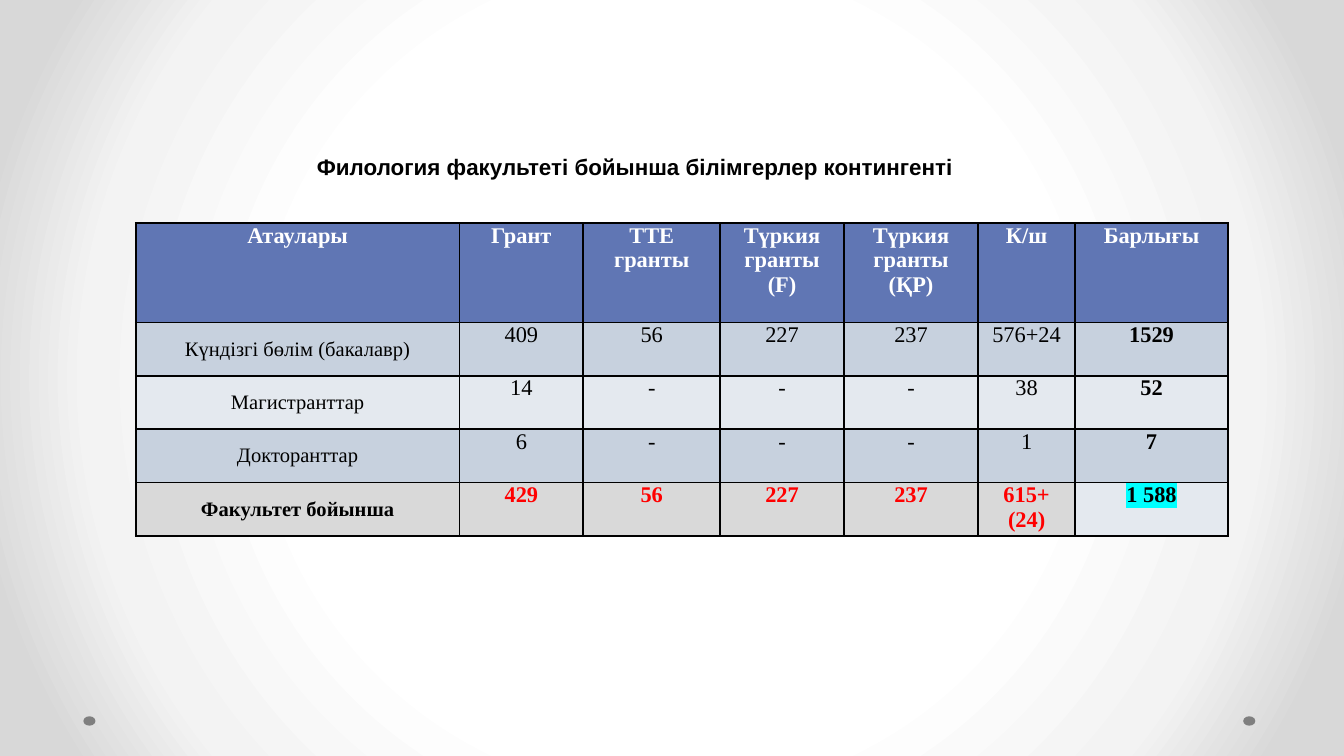
"""Build a slide with the student numbers of the philology faculty."""
from dataclasses import dataclass

import lxml.etree
import pptx
import pptx.dml.color
import pptx.enum.shapes
import pptx.enum.text
import pptx.oxml.ns
import pptx.util

Inches = pptx.util.Inches
qn = pptx.oxml.ns.qn
ANCHOR = pptx.enum.text.MSO_ANCHOR
ALIGN = pptx.enum.text.PP_ALIGN


@dataclass(frozen=True)
class Theme:
    white: str = "FFFFFF"
    black: str = "000000"
    red: str = "FF0000"
    cyan: str = "00FFFF"
    header: str = "6076B4"
    band_dark: str = "C7D1DE"
    band_light: str = "E4E9EF"
    summary: str = "D9D9D9"
    dot: str = "7F7F7F"
    backdrop: tuple = ((0, "FFFFFF"), (50, "FFFFFF"), (76, "F3F3F3"), (92, "D8D8D8"), (100, "D8D8D8"))
    title_font: str = "Arial"
    table_font: str = "Times New Roman"
    body_size: int = 12
    label_size: int = 11


THEME = Theme()


@dataclass(frozen=True)
class StudentRow:
    texts: tuple
    fill: str
    value_color: str = THEME.black
    bold: bool = False
    header: bool = False
    total_fill: str = ""
    total_highlight: str = ""


STUDENT_ROWS = (
    StudentRow(("Атаулары", "Грант", "ТТЕ гранты", "Түркия гранты (F)", "Түркия гранты (ҚР)", "К/ш", "Барлығы"),
               THEME.header, THEME.white, bold=True, header=True),
    StudentRow(("Күндізгі бөлім (бакалавр)", "409", "56", "227", "237", "576+24", "1529"), THEME.band_dark),
    StudentRow(("Магистранттар", "14", "-", "-", "-", "38", "52"), THEME.band_light),
    StudentRow(("Докторанттар", "6", "-", "-", "-", "1", "7"), THEME.band_dark),
    StudentRow(("Факультет бойынша", "429", "56", "227", "237", "615+\n(24)", "1 588"), THEME.summary, THEME.red,
               bold=True, total_fill=THEME.band_light, total_highlight=THEME.cyan),
)
SLIDE_WIDTH = 10
COLUMN_WIDTHS = (2.41, 0.92, 1.02, 0.92, 1, 0.72, 1.14)
TABLE_HEIGHT = 2.33
HEADER_HEIGHT = 0.74
ROW_HEIGHT = (TABLE_HEIGHT - HEADER_HEIGHT) / (len(STUDENT_ROWS) - 1)


def rgb(value: str) -> pptx.dml.color.RGBColor:
    return pptx.dml.color.RGBColor.from_string(value)


def add_color(parent, value: str) -> None:
    lxml.etree.SubElement(parent, qn("a:srgbClr"), val=value)


def write_text(frame, text: str, *, font: str, size: int, color: str = THEME.black, bold: bool = False,
               align=ALIGN.LEFT, highlight: str = "") -> None:
    frame.word_wrap = True
    for index, line in enumerate(text.split("\n")):
        paragraph = frame.add_paragraph() if index else frame.paragraphs[0]
        paragraph.alignment = align
        run = paragraph.add_run()
        run.text = line
        run.font.size = pptx.util.Pt(size)
        run.font.bold = bold
        run.font.color.rgb = rgb(color)
        if highlight:
            add_color(lxml.etree.SubElement(run.font._element, qn("a:highlight")), highlight)
        run.font.name = font


def paint_background(slide) -> None:
    slide.background.fill.gradient()
    gradient = slide.element.find(".//" + qn("a:gradFill"))
    for child in list(gradient):
        gradient.remove(child)
    stops = lxml.etree.SubElement(gradient, qn("a:gsLst"))
    for position, color in THEME.backdrop:
        add_color(lxml.etree.SubElement(stops, qn("a:gs"), pos=str(position * 1000)), color)
    circle = lxml.etree.SubElement(gradient, qn("a:path"), {"path": "circle"})
    lxml.etree.SubElement(circle, qn("a:fillToRect"), dict.fromkeys("ltrb", "50000"))


def draw_dot(slide, left: float) -> None:
    dot = slide.shapes.add_shape(pptx.enum.shapes.MSO_SHAPE.OVAL, Inches(left), Inches(5.33),
                                 Inches(0.09), Inches(0.07))
    dot.shadow.inherit = False
    dot.fill.solid()
    dot.fill.fore_color.rgb = rgb(THEME.dot)
    dot.line.fill.background()


def style_cell(cell, fill: str) -> None:
    cell.margin_left = cell.margin_right = Inches(0.07)
    cell.margin_top = cell.margin_bottom = 0
    properties = cell._tc.get_or_add_tcPr()
    for side in ("lnL", "lnR", "lnT", "lnB"):
        border = lxml.etree.SubElement(properties, qn(f"a:{side}"), w=str(pptx.util.Pt(1)))
        add_color(lxml.etree.SubElement(border, qn("a:solidFill")), THEME.black)
    cell.fill.solid()
    cell.fill.fore_color.rgb = rgb(fill)


def draw_row(table, row_index: int, row: StudentRow) -> None:
    table.rows[row_index].height = Inches(HEADER_HEIGHT if row.header else ROW_HEIGHT)
    last = len(row.texts) - 1
    for column, text in enumerate(row.texts):
        cell = table.cell(row_index, column)
        is_label = column == 0 and not row.header
        is_total = column == last and not row.header
        style_cell(cell, is_total and row.total_fill or row.fill)
        cell.vertical_anchor = ANCHOR.MIDDLE if is_label else ANCHOR.TOP
        write_text(cell.text_frame, text, font=THEME.table_font,
                   size=THEME.label_size if is_label else THEME.body_size,
                   color=THEME.black if is_label or is_total else row.value_color,
                   bold=row.bold or is_total, align=ALIGN.CENTER,
                   highlight=row.total_highlight if is_total else "")


def draw_table(slide) -> None:
    table = slide.shapes.add_table(len(STUDENT_ROWS), len(COLUMN_WIDTHS), Inches(1.01), Inches(1.66),
                                   Inches(sum(COLUMN_WIDTHS)), Inches(TABLE_HEIGHT)).table
    for column, width in zip(table.columns, COLUMN_WIDTHS):
        column.width = Inches(width)
    for row_index, row in enumerate(STUDENT_ROWS):
        draw_row(table, row_index, row)


def draw_title(slide) -> None:
    title = slide.shapes.add_textbox(Inches(2.26), Inches(1.09), Inches(5.26), Inches(0.3)).text_frame
    title.vertical_anchor = ANCHOR.MIDDLE
    title.auto_size = pptx.enum.text.MSO_AUTO_SIZE.SHAPE_TO_FIT_TEXT
    write_text(title, "Филология факультеті бойынша білімгерлер контингенті",
               font=THEME.title_font, size=THEME.body_size, bold=True)


def main() -> None:
    presentation = pptx.Presentation()
    presentation.slide_width = Inches(SLIDE_WIDTH)
    presentation.slide_height = Inches(SLIDE_WIDTH * 9 / 16)
    slide = presentation.slides.add_slide(presentation.slide_layouts[6])
    paint_background(slide)
    for left in (9.25, 0.62):
        draw_dot(slide, left)
    draw_table(slide)
    draw_title(slide)
    presentation.save("out.pptx")


if __name__ == "__main__":
    main()
